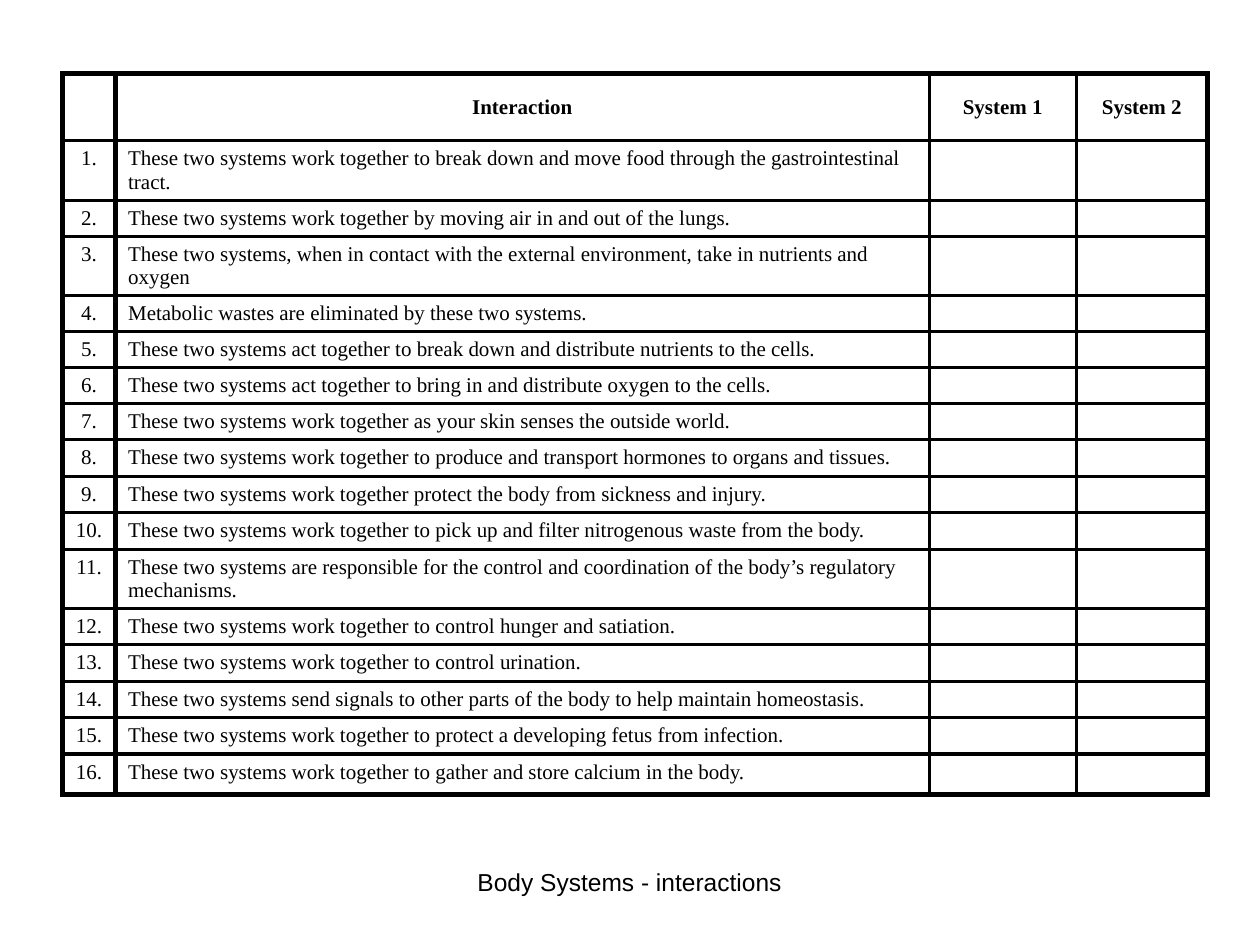
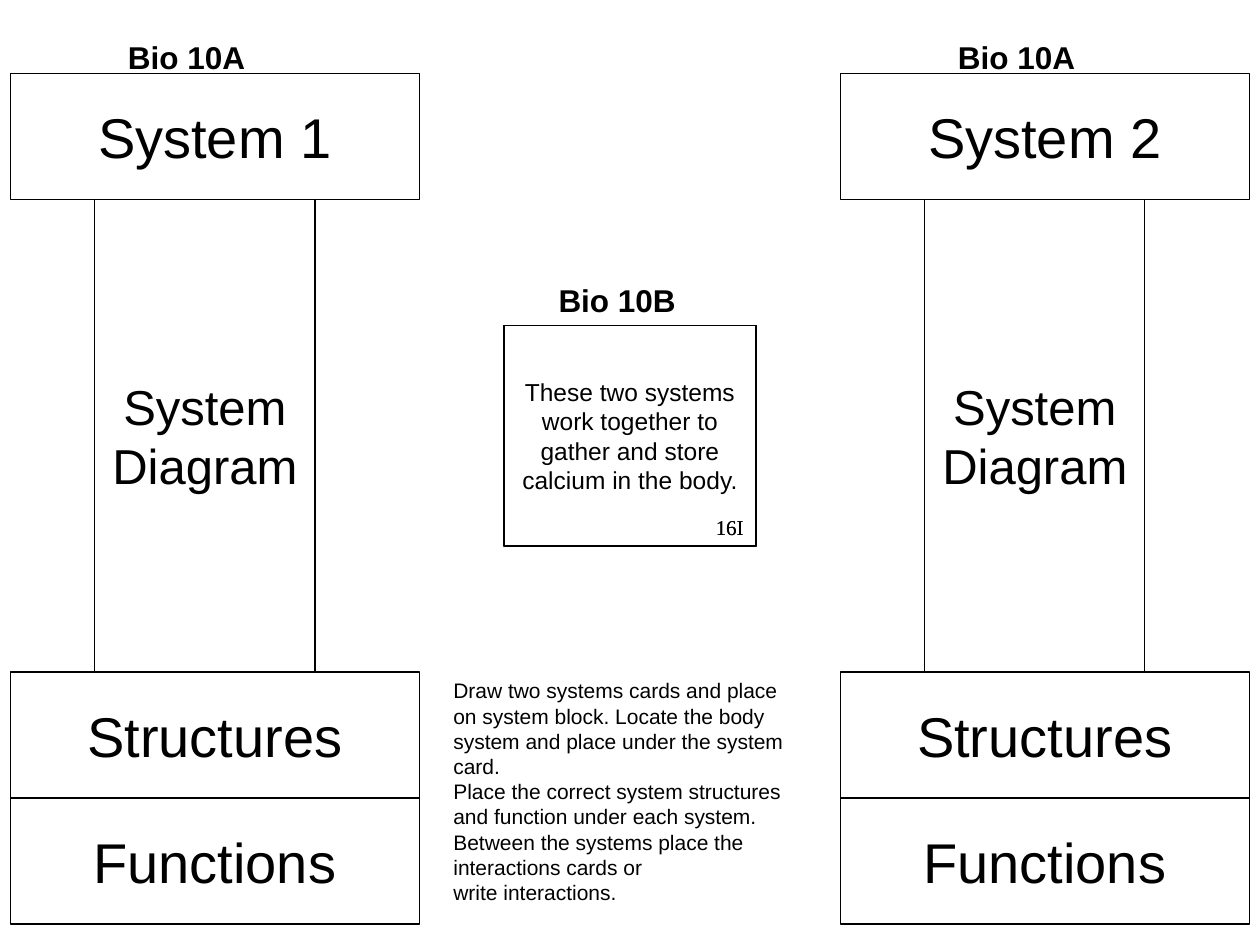
from lxml import etree
from pptx import Presentation
from pptx.dml.color import RGBColor
from pptx.enum.shapes import MSO_SHAPE as Preset
from pptx.enum.text import MSO_ANCHOR as Anchor, PP_ALIGN as Align
from pptx.oxml.ns import qn
from pptx.util import Cm, Pt

INK = "000000"
PAPER = "FFFFFF"
SANS = "Arial"
SERIF = "Times New Roman"
TITLE_ONLY, BLANK = 5, 6
THICK, THIN = 3, 2

COLUMN_WIDTHS = (1.07, 16.4, 2.97, 2.64)
HEADINGS = ("", "Interaction", "System 1", "System 2")
HEADER_HEIGHT, ONE_LINE, ROOMY_LINE, TWO_LINES, LAST_ROW = 1.36, 0.72, 0.74, 1.2, 0.82
ROOMY_ROWS = (8, 10, 13, 15)
TWO_LINE_ROWS = (1, 3, 11)
INTERACTIONS = (
    "These two systems work together to break down and move food through the gastrointestinal tract.",
    "These two systems work together by moving air in and out of the lungs.",
    "These two systems, when in contact with the external environment, take in nutrients and oxygen",
    "Metabolic wastes are eliminated by these two systems.",
    "These two systems act together to break down and distribute nutrients to the cells.",
    "These two systems act together to bring in and distribute oxygen to the cells.",
    "These two systems work together as your skin senses the outside world.",
    "These two systems work together to produce and transport hormones to organs and tissues.",
    "These two systems work together protect the body from sickness and injury.",
    "These two systems work together to pick up and filter nitrogenous waste from the body.",
    "These two systems are responsible for the control and coordination of the body’s regulatory mechanisms.",
    "These two systems work together to control hunger and satiation.",
    "These two systems work together to control urination.",
    "These two systems send signals to other parts of the body to help maintain homeostasis.",
    "These two systems work together to protect a developing fetus from infection.",
    "These two systems work together to gather and store calcium in the body.",
)
INSTRUCTIONS = (
    "Draw two systems cards and place on system block. Locate the body system and place under the system card.",
    "Place the correct system structures and function under each system. "
    "Between the systems place the interactions cards or",
    "write interactions.",
)


def color(hex_text):
    return RGBColor.from_string(hex_text)


def write(frame, lines, size, font=SANS, bold=False, align=Align.LEFT):
    """Fill a text frame with one paragraph per line, all in one style."""
    for index, line in enumerate(lines):
        para = frame.add_paragraph() if index else frame.paragraphs[0]
        para.text = line
        para.alignment = align
        para.font.name = font
        para.font.size = Pt(size)
        para.font.bold = bold
        para.font.color.rgb = color(INK)
        if not line:
            # An empty paragraph takes its height from its end mark.
            etree.SubElement(para._p, qn("a:endParaRPr"), sz=str(size * 100))


def add_label(page, left, top, width, height, lines, size, **style):
    box = page.shapes.add_textbox(Cm(left), Cm(top), Cm(width), Cm(height))
    box.text_frame.word_wrap = True
    write(box.text_frame, lines, size, **style)


def add_block(page, left, top, width, height, lines=(), size=14, wrap=False, fill=None):
    block = page.shapes.add_shape(Preset.RECTANGLE, Cm(left), Cm(top), Cm(width), Cm(height))
    block.shadow.inherit = False
    if fill:
        block.fill.solid()
        block.fill.fore_color.rgb = color(fill)
    else:
        block.fill.background()
    block.line.color.rgb = color(INK)
    block.line.width = Pt(0.75)
    block.text_frame.word_wrap = wrap
    block.text_frame.vertical_anchor = Anchor.MIDDLE
    write(block.text_frame, lines, size, align=Align.CENTER)


def set_borders(cell, widths):
    """Draw the left, right, top and bottom borders, in that order."""
    properties = cell._tc.get_or_add_tcPr()
    for side, width in zip("LRTB", widths):
        line = etree.SubElement(properties, qn(f"a:ln{side}"), w=str(Pt(width)))
        fill = etree.SubElement(line, qn("a:solidFill"))
        etree.SubElement(fill, qn("a:srgbClr"), val=INK)


def row_height(row, last):
    if row == 0:
        return HEADER_HEIGHT
    if row == last:
        return LAST_ROW
    if row in TWO_LINE_ROWS:
        return TWO_LINES
    return ROOMY_LINE if row in ROOMY_ROWS else ONE_LINE


def add_interaction_table(page, left, top):
    rows = [HEADINGS] + [(f"{number}.", text, "", "") for number, text in enumerate(INTERACTIONS, 1)]
    last_row, last_column = len(rows) - 1, len(COLUMN_WIDTHS) - 1
    heights = [row_height(row, last_row) for row in range(len(rows))]
    table = page.shapes.add_table(
        len(rows), len(COLUMN_WIDTHS),
        Cm(left), Cm(top), Cm(sum(COLUMN_WIDTHS)), Cm(sum(heights))).table
    table.first_row = table.horz_banding = False
    for column, width in zip(table.columns, COLUMN_WIDTHS):
        column.width = Cm(width)
    for row, texts in enumerate(rows):
        table.rows[row].height = Cm(heights[row])
        for column, text in enumerate(texts):
            cell = table.cell(row, column)
            is_header = row == 0
            thick_sides = (column <= 1, column in (0, last_column), is_header, row == last_row)
            set_borders(cell, [THICK if thick else THIN for thick in thick_sides])
            cell.fill.background()
            cell.vertical_anchor = Anchor.MIDDLE if is_header else Anchor.TOP
            centered = is_header or column == 0
            write(cell.text_frame, [text], 12, SERIF, is_header,
                  Align.CENTER if centered else Align.LEFT)


def add_system_tower(page, left, top, name):
    """Stack the label, system, diagram, structures and functions of one system."""
    width, height, diagram_height = 8.25, 2.54, 9.53
    system_top = top + 0.84
    diagram_top = system_top + height
    structures_top = diagram_top + diagram_height
    add_label(page, left + 2.12, top, 3.18, 1.02, ["Bio 10A"], 18, bold=True)
    add_block(page, left + 1.7, diagram_top, 4.44, diagram_height, ["System", "Diagram"], 28)
    for text, block_top in ((name, system_top), ("Structures", structures_top),
                            ("Functions", structures_top + height)):
        add_block(page, left, block_top, width, height, [text], 32)


def add_interaction_cards(page, left, top):
    """Lay a clear card with the interaction over a white card of the same number."""
    add_label(page, left + 0.85, top, 3.18, 1.02, ["Bio 10B"], 18, bold=True)
    for lines, fill in (((), PAPER), (INTERACTIONS[-1:], None)):
        add_block(page, left, top + 1.02, 5.08, 4.45, lines, 14, wrap=True, fill=fill)
        add_label(page, left + 4.02, top + 4.7, 1.47, 0.76, ["16I"], 12, font=SERIF)


def build_table_slide(deck):
    page = deck.slides.add_slide(deck.slide_layouts[TITLE_ONLY])
    title = page.shapes.title
    title.left, title.top, title.width, title.height = Cm(8.67), Cm(17.35), Cm(8.05), Cm(1.32)
    title.text_frame.vertical_anchor = Anchor.TOP
    write(title.text_frame, ["Body Systems - interactions"], 14, align=Align.CENTER)
    add_interaction_table(page, 1.26, 1.48)


def build_board_slide(deck):
    page = deck.slides.add_slide(deck.slide_layouts[BLANK])
    for name, left in (("System 1", 0.21), ("System 2", 16.94)):
        add_system_tower(page, left, 0.64, name)
    add_interaction_cards(page, 10.16, 5.54)
    add_label(page, 8.89, 13.54, 7.62, 4.83, INSTRUCTIONS, 12)


def main():
    deck = Presentation()
    deck.slide_width, deck.slide_height = Cm(25.4), Cm(19.05)
    build_table_slide(deck)
    build_board_slide(deck)
    deck.save("out.pptx")


if __name__ == "__main__":
    main()
